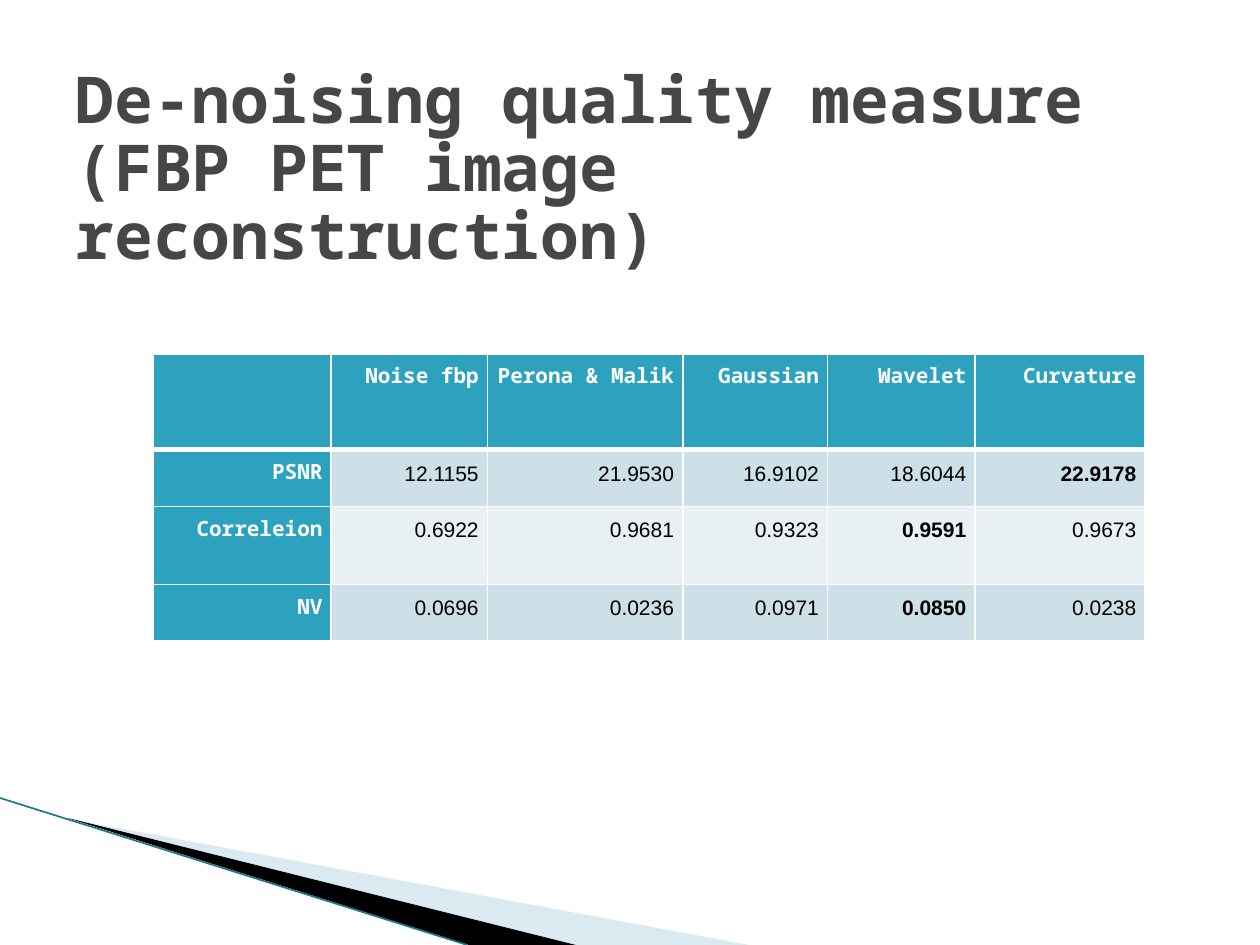
"""Build the de-noising quality slide with its comparison table."""
from dataclasses import dataclass

from lxml import etree
from pptx import Presentation
from pptx.dml.color import RGBColor
from pptx.enum.shapes import MSO_CONNECTOR
from pptx.enum.text import MSO_ANCHOR, MSO_AUTO_SIZE, PP_ALIGN
from pptx.oxml.ns import qn
from pptx.util import Pt

LEFT = PP_ALIGN.LEFT
JUSTIFY = PP_ALIGN.JUSTIFY
MIDDLE = MSO_ANCHOR.MIDDLE
TOP = MSO_ANCHOR.TOP
NO_FIT = MSO_AUTO_SIZE.NONE
STRAIGHT = MSO_CONNECTOR.STRAIGHT

FACE = "Noto Sans Mono"
NUMBER_FACE = "Arial"
TEAL, WHITE, BLACK = "2DA2BF", "FFFFFF", "000000"
COLUMN_WIDTHS = (101.5, 89.3, 111.6, 82.8, 84.2, 97.2)


@dataclass
class Wedge:
    points: tuple
    color: str
    opacity: int


@dataclass
class Row:
    texts: tuple
    height: float
    fill: str
    best: int = -1


WEDGES = (
    Wedge(((39.6, 468), (428, 540), (328, 540)), "A0CBDC", 40),
    Wedge(((38.2, 467.3), (329, 540), (268, 540)), BLACK, 100),
)
ROWS = (
    Row(("", "Noise fbp", "Perona & Malik", "Gaussian", "Wavelet", "Curvature"), 54.7, TEAL),
    Row(("PSNR", "12.1155", "21.9530", "16.9102", "18.6044", "22.9178"), 32.4, "CDE0E8", 5),
    Row(("Correleion", "0.6922", "0.9681", "0.9323", "0.9591", "0.9673"), 44.6, "E8F0F4", 4),
    Row(("NV", "0.0696", "0.0236", "0.0971", "0.0850", "0.0238"), 32.4, "CDE0E8", 4),
)


def paint(target, color: str) -> None:
    """Give a fill a solid colour."""
    target.solid()
    target.fore_color.rgb = RGBColor.from_string(color)


def add_span(para, text: str, size: float, color: str, bold: bool):
    """Add one formatted run to a paragraph."""
    span = para.add_run()
    span.text = text
    span.font.name = FACE
    span.font.size = Pt(size)
    span.font.bold = bold
    span.font.color.rgb = RGBColor.from_string(color)
    return span


def add_wedge(page, wedge: Wedge) -> None:
    """Draw one filled wedge in the lower left corner."""
    start, *others = [(Pt(x), Pt(y)) for x, y in wedge.points]
    builder = page.shapes.build_freeform(*start)
    builder.add_line_segments(others, close=True)
    shape = builder.convert_to_shape()
    shape.shadow.inherit = False
    shape.line.fill.background()
    paint(shape.fill, wedge.color)
    if wedge.opacity < 100:
        color = shape.fill._xPr.find(".//" + qn("a:srgbClr"))
        etree.SubElement(color, qn("a:alpha"), val=str(wedge.opacity * 1000))


def add_edge(page) -> None:
    """Draw the thin line below the wedges."""
    edge = page.shapes.add_connector(STRAIGHT, Pt(0), Pt(456), Pt(267), Pt(540))
    edge.line.color.rgb = RGBColor.from_string("20768C")
    edge.line.width = Pt(0.95)
    etree.SubElement(edge._element.spPr, qn("a:effectLst"))


def add_borders(cell, bottom: float, top: float) -> None:
    """Give a cell white borders of the given bottom and top widths."""
    properties = cell._tc.get_or_add_tcPr()
    for side, width in (("L", 1), ("R", 1), ("T", top), ("B", bottom)):
        border = etree.SubElement(properties, qn(f"a:ln{side}"), w=str(Pt(width)))
        solid = etree.SubElement(border, qn("a:solidFill"))
        etree.SubElement(solid, qn("a:srgbClr"), val=WHITE)


def fill_cell(cell, text: str, fill: str, is_label: bool, bold: bool) -> None:
    """Fill and write one table cell, read from right to left."""
    paint(cell.fill, fill)
    cell.margin_left = cell.margin_right = Pt(5)
    cell.margin_top, cell.margin_bottom = Pt(11.5), Pt(0)
    cell.vertical_anchor = TOP
    if not text:
        return
    para = cell.text_frame.paragraphs[0]
    para.alignment = JUSTIFY
    para.line_spacing = Pt(9)
    para.space_after = Pt(2.5)
    para._p.get_or_add_pPr().set("rtl", "1")
    span = add_span(para, text, 12, WHITE if is_label else BLACK, bold)
    face = FACE if is_label else NUMBER_FACE
    etree.SubElement(span._r.get_or_add_rPr(), qn("a:cs"), typeface=face)


def add_quality_table(page) -> None:
    """Add the table of quality measures."""
    frame = page.shapes.add_table(
        len(ROWS), len(COLUMN_WIDTHS), Pt(87.8), Pt(202.3),
        Pt(sum(COLUMN_WIDTHS)), Pt(sum(row.height for row in ROWS)))
    table = frame.table
    for column, width in zip(table.columns, COLUMN_WIDTHS):
        column.width = Pt(width)
    for r, row in enumerate(ROWS):
        table.rows[r].height = Pt(row.height)
        for c, text in enumerate(row.texts):
            cell = table.cell(r, c)
            is_label = r == 0 or c == 0
            add_borders(cell, 3 if r == 0 else 1, 3 if r == 1 else 1)
            fill_cell(cell, text, TEAL if is_label else row.fill,
                      is_label, is_label or c == row.best)


def write_title(page) -> None:
    """Place and write the slide title."""
    title = page.shapes.title
    title.left, title.top, title.width, title.height = Pt(36), Pt(49), Pt(648), Pt(136)
    box = title.text_frame
    box.word_wrap = True
    box.auto_size = NO_FIT
    box.vertical_anchor = MIDDLE
    box.margin_bottom = Pt(42)
    para = box.paragraphs[0]
    para.alignment = LEFT
    para.line_spacing = 0.88
    add_span(para, "De-noising quality measure (FBP PET image reconstruction)",
             36.9, "464646", True)


def main() -> None:
    """Build and save the deck."""
    deck = Presentation()
    deck.slide_width, deck.slide_height = Pt(720), Pt(540)
    page = deck.slides.add_slide(deck.slide_layouts[5])
    paint(page.background.fill, WHITE)
    for wedge in WEDGES:
        add_wedge(page, wedge)
    add_edge(page)
    add_quality_table(page)
    write_title(page)
    deck.save("out.pptx")


if __name__ == "__main__":
    main()
